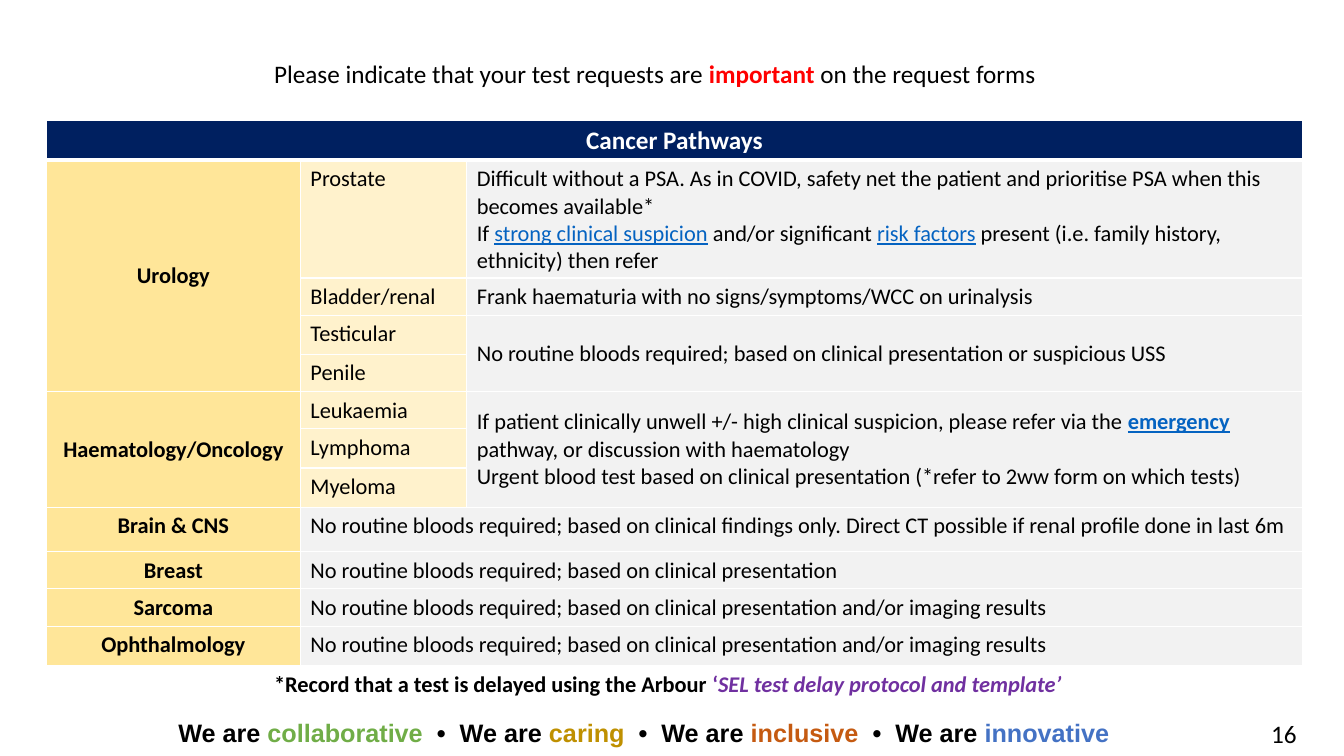
import pptx
import pptx.dml.color
import pptx.enum.text
import pptx.oxml
import pptx.oxml.ns
import pptx.util

PX = 9144  # EMU per px, 100 px to the inch
ALIGN = pptx.enum.text.PP_ALIGN
ANCHOR = pptx.enum.text.MSO_ANCHOR

NAVY, GOLD, CREAM, GREY = "002060", "FFE699", "FFF2CC", "F2F2F2"
WHITE, BLACK, RED, PURPLE = "FFFFFF", "000000", "FF0000", "7030A0"
BOLD = {"bold": True}
LINK = {"color": "0563C1", "underline": True}


def rgb(value):
    return pptx.dml.color.RGBColor.from_string(value)


class Slide:
    def __init__(self, prs, font="Calibri", size=16):
        self.slide = prs.slides.add_slide(prs.slide_layouts[6])
        self.style = {"name": font, "size": size, "bold": False, "color": BLACK}

    def fill_text(self, tf, paragraphs, align=ALIGN.LEFT, **base):
        """Each paragraph is a list of runs; a run is a string or (text, format)."""
        for i, runs in enumerate(paragraphs):
            p = tf.paragraphs[0] if i == 0 else tf.add_paragraph()
            p.alignment = align
            for run in runs:
                text, own = (run, {}) if isinstance(run, str) else run
                r = p.add_run()
                r.text = text
                values = {**self.style, **base, **own}
                r.font.color.rgb = rgb(values.pop("color"))
                values["size"] = pptx.util.Pt(values["size"])
                for name, value in values.items():
                    setattr(r.font, name, value)

    def text(self, x, y, w, h, runs, **fmt):
        sp = self.slide.shapes.add_textbox(x * PX, y * PX, w * PX, h * PX)
        sp.text_frame.word_wrap = True
        self.fill_text(sp.text_frame, [runs], **fmt)

    def table(self, x, y, cols, rows):
        frame = self.slide.shapes.add_table(
            len(rows), len(cols), x * PX, y * PX, sum(cols) * PX, sum(rows) * PX)
        table = frame.table
        table.first_row = table.horz_banding = False
        for column, w in zip(table.columns, cols):
            column.width = w * PX
        for row, h in zip(table.rows, rows):
            row.height = h * PX
        return table

    def cell(self, table, row, col, fill, paragraphs, span=(1, 1), middle=False, **fmt):
        cell = table.cell(row, col)
        if span != (1, 1):
            cell.merge(table.cell(row + span[0] - 1, col + span[1] - 1))
        cell.fill.solid()
        cell.fill.fore_color.rgb = rgb(fill)
        cell.vertical_anchor = ANCHOR.MIDDLE if middle else ANCHOR.TOP
        self.fill_text(cell.text_frame, paragraphs, **fmt)

    def borders(self, table, color, thin, thick):
        """Rule every cell thinly, with a thick line under the first row."""
        for r in range(len(table.rows)):
            for c in range(len(table.columns)):
                tcPr = table.cell(r, c)._tc.get_or_add_tcPr()
                for i, side in enumerate("LRTB"):
                    heavy = (r, side) in ((0, "B"), (1, "T"))
                    width = pptx.util.Pt(thick if heavy else thin)
                    tcPr.insert(i, pptx.oxml.parse_xml(
                        f'<a:ln{side} {pptx.oxml.ns.nsdecls("a")} w="{width}"><a:solidFill>'
                        f'<a:srgbClr val="{color}"/></a:solidFill></a:ln{side}>'))


GROUPS = [  # first row, row count, name
    (1, 4, "Urology"), (5, 3, "Haematology/Oncology"), (8, 1, "Brain & CNS"),
    (9, 1, "Breast"), (10, 1, "Sarcoma"), (11, 1, "Ophthalmology"),
]
SITES = ["Prostate", "Bladder/renal", "Testicular", "Penile",
         "Leukaemia", "Lymphoma", "Myeloma"]
NO_BLOODS = "No routine bloods required; based on clinical "
ADVICE = [  # first row, first column, span, paragraphs
    (1, 2, (1, 1), [
        ["Difficult without a PSA. As in COVID, safety net the patient and "
         "prioritise PSA when this becomes available*"],
        ["If ", ("strong clinical suspicion", LINK), " and/or significant ",
         ("risk factors", LINK), " present (i.e. family history, ethnicity) then refer"]]),
    (2, 2, (1, 1), [["Frank haematuria with no signs/symptoms/WCC on urinalysis"]]),
    (3, 2, (2, 1), [[NO_BLOODS + "presentation or suspicious USS"]]),
    (5, 2, (3, 1), [
        ["If patient clinically unwell +/- high clinical suspicion, please refer via the ",
         ("emergency", {**LINK, **BOLD}), " pathway, or discussion with haematology"],
        ["Urgent blood test based on clinical presentation "
         "(*refer to 2ww form on which tests)"]]),
    (8, 1, (1, 2), [[NO_BLOODS + "findings only. Direct CT possible if renal "
                     "profile done in last 6m"]]),
    (9, 1, (1, 2), [[NO_BLOODS + "presentation"]]),
    (10, 1, (1, 2), [[NO_BLOODS + "presentation and/or imaging results"]]),
    (11, 1, (1, 2), [[NO_BLOODS + "presentation and/or imaging results"]]),
]
VALUES = [("collaborative", "70AD47"), ("caring", "BF9000"),
          ("inclusive", "C55A11"), ("innovative", "4472C4")]


def main():
    prs = pptx.Presentation()
    prs.slide_width, prs.slide_height = 1333 * PX, 750 * PX
    s = Slide(prs)

    motto = []
    for word, color in VALUES:
        motto += ["  •  We are " if motto else "We are ", (word, {"color": color})]
    s.text(167, 707, 1000, 40, motto, name="Arial", size=18, bold=True)
    s.text(1111, 708, 185, 40, ["16"], size=18, align=ALIGN.RIGHT)

    table = s.table(46, 119, [252, 165, 829],
                    [40, 116, 37, 39, 37, 33, 39, 39, 44, 37, 37, 39])
    s.cell(table, 0, 0, NAVY, [["Cancer Pathways"]], (1, 3),
           align=ALIGN.CENTER, size=18, bold=True, color=WHITE)
    for row, count, name in GROUPS:
        s.cell(table, row, 0, GOLD, [[name]], (count, 1), middle=count > 1,
               align=ALIGN.CENTER, bold=True)
    for row, site in enumerate(SITES, 1):
        s.cell(table, row, 1, CREAM, [[site]])
    for row, col, span, paragraphs in ADVICE:
        s.cell(table, row, col, GREY, paragraphs, span, middle=span[0] > 1)
    s.borders(table, WHITE, 1, 3)

    s.text(262, 660, 810, 37, [
        "*Record that a test is delayed using the Arbour ", ("‘", {"color": PURPLE}),
        ("SEL test delay protocol and template’", {"color": PURPLE, "italic": True})],
        bold=True)
    s.text(262, 53, 801, 40, [
        "Please indicate that your test requests are ",
        ("important", {"color": RED, **BOLD}), " on the request forms"], size=18)
    prs.save("out.pptx")


if __name__ == "__main__":
    main()
